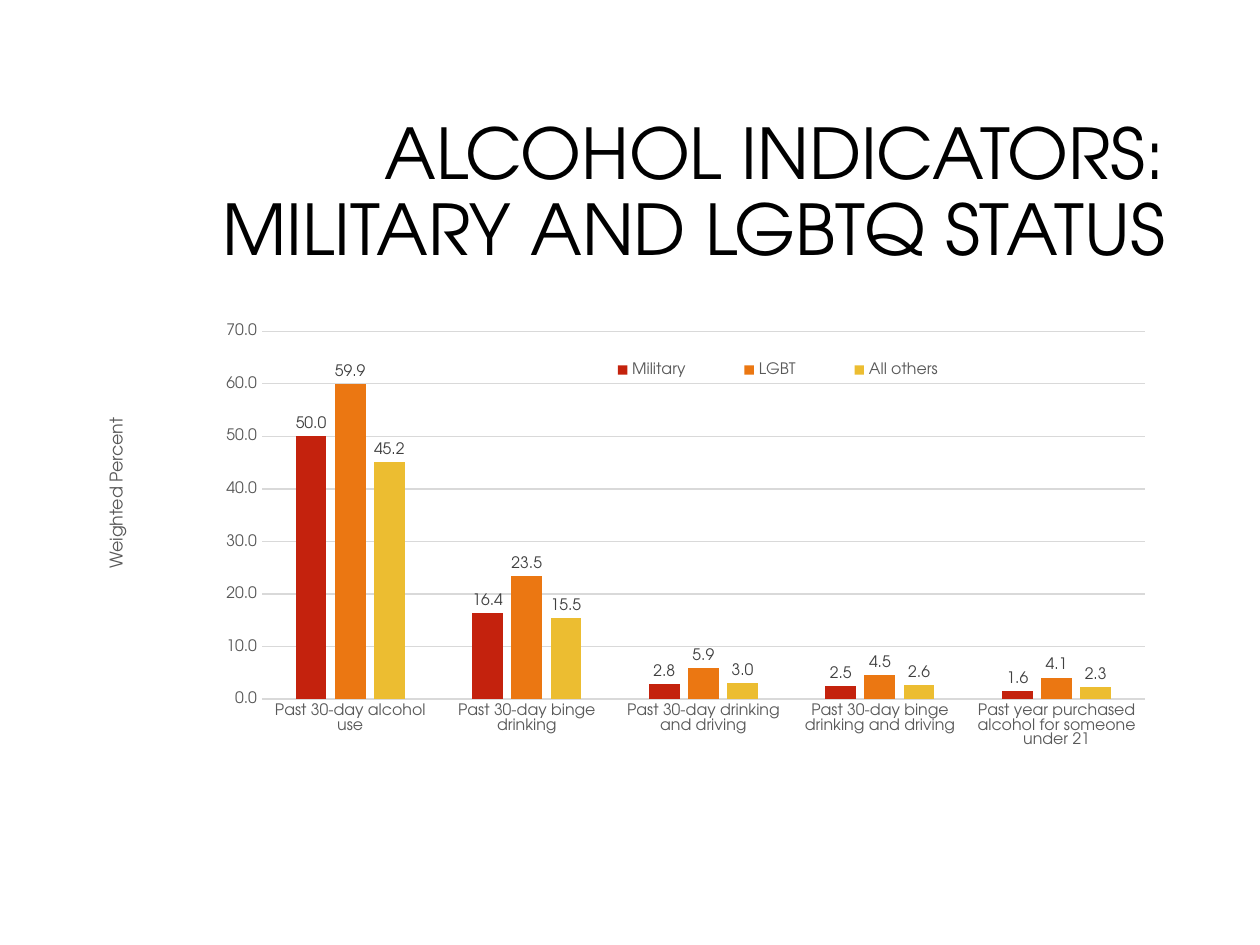
"""Build a slide with a clustered column chart of alcohol indicators."""
from lxml import etree
from pptx import Presentation
from pptx.chart import data as chart_data
from pptx.dml import color
from pptx.enum import chart as charts, text
from pptx.oxml import ns
from pptx.util import Pt

FONT = "TeX Gyre Adventor"
TITLE = "ALCOHOL INDICATORS: MILITARY AND LGBTQ STATUS"
AXIS_TITLE = "Weighted Percent"
CATEGORIES = [
    "Past 30-day alcohol use",
    "Past 30-day binge drinking",
    "Past 30-day drinking and driving",
    "Past 30-day binge drinking and driving",
    "Past year purchased alcohol for someone under 21",
]
SERIES = [
    ("Military", "C4220D", [50, 16.4, 2.8, 2.5, 1.6]),
    ("LGBT", "EB7712", [59.9, 23.5, 5.9, 4.5, 4.1]),
    ("All others", "ECBD31", [45.2, 15.5, 3, 2.6, 2.3]),
]
GREY, LABEL_GREY, GRID_GREY = "595959", "404040", "D9D9D9"


def rgb(value):
    return color.RGBColor.from_string(value)


def style_font(font, size=9, ink=GREY):
    font.name, font.size, font.bold = FONT, Pt(size), False
    font.color.rgb = rgb(ink)


def write(frame, content, size, ink, align=None, spacing=None):
    para = frame.paragraphs[0]
    para.alignment, para.line_spacing = align, spacing
    span = para.add_run()
    span.text = content
    style_font(span.font, size, ink)


def style_line(line):
    line.color.rgb = rgb(GRID_GREY)
    line.width = Pt(0.75)


def place(parent, index, target=None, **edges):
    for old in parent.findall(ns.qn("c:layout")):
        parent.remove(old)
    layout = etree.Element(ns.qn("c:layout"))
    manual = etree.SubElement(layout, ns.qn("c:manualLayout"))
    settings = {"layoutTarget": target} if target else {}
    settings.update(xMode="edge", yMode="edge", **edges)
    for name, value in settings.items():
        etree.SubElement(manual, ns.qn("c:" + name)).set("val", str(value))
    parent.insert(index, layout)


def add_title(page):
    title = page.shapes.title
    title.left, title.top, title.width, title.height = Pt(84), Pt(60.5), Pt(589), Pt(101.5)
    frame = title.text_frame
    frame.word_wrap = True
    frame.auto_size = text.MSO_AUTO_SIZE.NONE
    frame.vertical_anchor = text.MSO_ANCHOR.MIDDLE
    write(frame, TITLE, 40, "000000", text.PP_ALIGN.RIGHT, 0.9)


def style_axes(chart):
    for axis in (chart.category_axis, chart.value_axis):
        axis.major_tick_mark = axis.minor_tick_mark = charts.XL_TICK_MARK.NONE
        style_font(axis.tick_labels.font)
    style_line(chart.category_axis.format.line)

    values = chart.value_axis
    values.minimum_scale, values.maximum_scale, values.major_unit = 0, 70, 10
    values.format.line.fill.background()
    style_line(values.major_gridlines.format.line)
    values.tick_labels.number_format = "0.0"
    values.tick_labels.number_format_is_linked = False

    frame = values.axis_title.text_frame
    write(frame, AXIS_TITLE, 10, GREY)
    frame._txBody.find(ns.qn("a:bodyPr")).set("rot", "-5400000")
    place(values.axis_title._element, 1, x=0.02, y=0.2)


def style_series(plot):
    plot.gap_width, plot.overlap = 219, -27
    plot.vary_by_categories = False
    for series, (_, fill, _) in zip(plot.series, SERIES):
        series.format.fill.solid()
        series.format.fill.fore_color.rgb = rgb(fill)
        labels = series.data_labels
        labels.show_value = True
        labels.position = charts.XL_LABEL_POSITION.OUTSIDE_END
        labels.number_format, labels.number_format_is_linked = "0.0", False
        style_font(labels.font, ink=LABEL_GREY)


def add_chart(page):
    data = chart_data.CategoryChartData(number_format="0.0")
    data.categories = CATEGORIES
    for name, _, values in SERIES:
        data.add_series(name, values)
    chart = page.shapes.add_chart(
        charts.XL_CHART_TYPE.COLUMN_CLUSTERED,
        Pt(47), Pt(173), Pt(626), Pt(320), data).chart
    chart.has_title = False
    style_font(chart.font, 10, "000000")
    style_axes(chart)
    style_series(chart.plots[0])
    plot_area = chart._chartSpace.chart.plotArea
    place(plot_area, 0, "inner", x=0.164, y=0.051, w=0.806, h=0.657)

    chart.has_legend = True
    legend = chart.legend
    legend.position = charts.XL_LEGEND_POSITION.BOTTOM
    legend.include_in_layout = False
    style_font(legend.font)
    place(legend._element, 1, x=0.44, y=0.09, w=0.39, h=0.06)


def main():
    deck = Presentation()
    deck.slide_width, deck.slide_height = Pt(720), Pt(540)
    page = deck.slides.add_slide(deck.slide_layouts[5])
    add_title(page)
    add_chart(page)
    deck.save("out.pptx")


if __name__ == "__main__":
    main()
